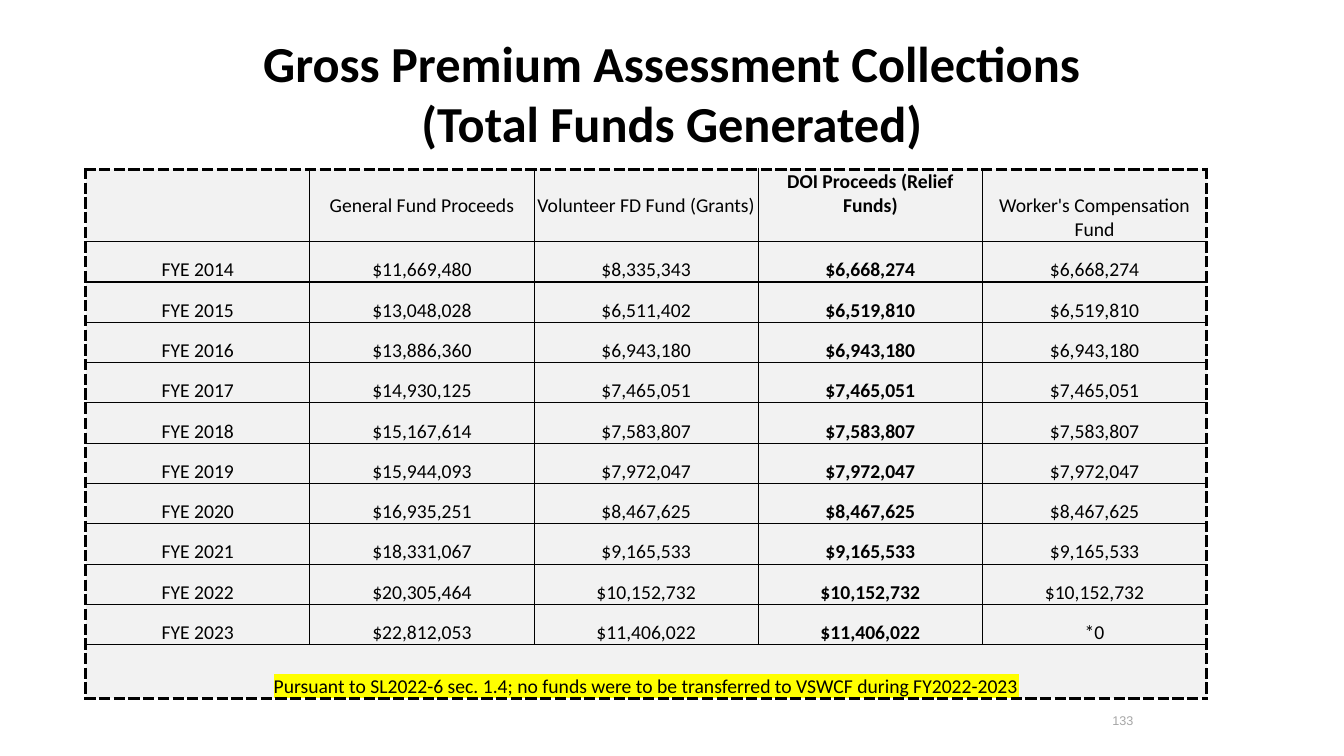
import pptx
import pptx.dml.color
import pptx.enum.text
import pptx.oxml
import pptx.oxml.ns
import pptx.util

Inches, Pt = pptx.util.Inches, pptx.util.Pt
RGBColor = pptx.dml.color.RGBColor
ALIGN, ANCHOR = pptx.enum.text.PP_ALIGN, pptx.enum.text.MSO_ANCHOR

BLACK = RGBColor(0x00, 0x00, 0x00)
PALE = RGBColor(0xF2, 0xF2, 0xF2)
GREY = RGBColor(0xA6, 0xA6, 0xA6)
YELLOW = RGBColor(0xFF, 0xFF, 0x00)
SHADE = RGBColor(0xC0, 0xC0, 0xC0)

TITLE = "Gross Premium Assessment Collections\v(Total Funds Generated)"
HEADS = ["", "General Fund Proceeds", "Volunteer FD Fund (Grants)",
         "DOI Proceeds (Relief Funds)", "Worker's Compensation Fund"]
FUNDS = [
    ("$11,669,480", "$8,335,343", "$6,668,274", "$6,668,274"),
    ("$13,048,028", "$6,511,402", "$6,519,810", "$6,519,810"),
    ("$13,886,360", "$6,943,180", "$6,943,180", "$6,943,180"),
    ("$14,930,125", "$7,465,051", "$7,465,051", "$7,465,051"),
    ("$15,167,614", "$7,583,807", "$7,583,807", "$7,583,807"),
    ("$15,944,093", "$7,972,047", "$7,972,047", "$7,972,047"),
    ("$16,935,251", "$8,467,625", "$8,467,625", "$8,467,625"),
    ("$18,331,067", "$9,165,533", "$9,165,533", "$9,165,533"),
    ("$20,305,464", "$10,152,732", "$10,152,732", "$10,152,732"),
    ("$22,812,053", "$11,406,022", "$11,406,022", "*0"),
]
NOTE = ("Pursuant to SL2022-6 sec. 1.4; no funds were to be transferred "
        "to VSWCF during FY2022-2023")
BOLD = 3  # column of relief funds
NS = 'xmlns:a="http://schemas.openxmlformats.org/drawingml/2006/main"'


class Deck:
    def __init__(self):
        self.file = pptx.Presentation()
        self.file.slide_width = Inches(13.33)
        self.file.slide_height = Inches(7.5)
        self.slide = self.file.slides.add_slide(self.file.slide_layouts[6])
        self.base = {"name": "Calibri", "size": Pt(14), "bold": False}

    def fill(self, frame, text, align=ALIGN.CENTER, color=BLACK, **style):
        """Set the words of a text frame and their style."""
        para = frame.paragraphs[0]
        para.text = text
        para.alignment = align
        for run in para.runs:
            for key, value in {**self.base, **style}.items():
                setattr(run.font, key, value)
            run.font.color.rgb = color

    def effect(self, frame, xml):
        """Put a text effect on every run, ahead of its typeface."""
        for run in frame.paragraphs[0].runs:
            latin = run.font._element.find(pptx.oxml.ns.qn("a:latin"))
            latin.addprevious(pptx.oxml.parse_xml(xml))

    def text(self, text, box, **style):
        frame = self.slide.shapes.add_textbox(*map(Inches, box)).text_frame
        frame.word_wrap = True
        frame.vertical_anchor = ANCHOR.MIDDLE
        self.fill(frame, text, **style)
        return frame

    def edge(self, cell, side, outer):
        width, dash = (Pt(2.25), "lgDash") if outer else (Pt(1), "solid")
        cell._tc.get_or_add_tcPr().append(pptx.oxml.parse_xml(
            f'<a:ln{side} {NS} w="{width}"><a:solidFill><a:srgbClr '
            f'val="{BLACK}"/></a:solidFill><a:prstDash val="{dash}"/>'
            f'</a:ln{side}>'))

    def table(self, rows, box, highs):
        count, wide = len(rows), len(rows[0])
        grid = self.slide.shapes.add_table(
            count, wide, *map(Inches, box)).table
        grid.first_row = grid.horz_banding = False
        for row, high in zip(grid.rows, highs):
            row.height = Inches(high)
        for col in grid.columns:
            col.width = Inches(box[2] / wide)
        last = count - 1
        grid.cell(last, 0).merge(grid.cell(last, wide - 1))
        for r, row in enumerate(rows):
            for c, text in enumerate(row):
                cell = grid.cell(r, c)
                right = c == wide - 1 or cell.is_merge_origin
                outer = {"L": c == 0, "R": right,
                         "T": r == 0, "B": r == last}
                for side, flag in outer.items():
                    self.edge(cell, side, flag)
                cell.fill.solid()
                cell.fill.fore_color.rgb = PALE
                cell.vertical_anchor = ANCHOR.BOTTOM
                for side in ("left", "right", "top"):
                    setattr(cell, f"margin_{side}", Inches(0.01))
                # Heads stand one line up, except the last one
                raised = r == 0 and c < wide - 1
                cell.margin_bottom = Inches(0.24 if raised else 0)
                if text:
                    self.fill(cell.text_frame, text, bold=c == BOLD)
        return grid


def main():
    deck = Deck()
    title = deck.text(TITLE, (0, 0.26, 13.33, 1.31), size=Pt(36), bold=True)
    deck.effect(title, f'<a:effectLst {NS}><a:outerShdw dist="38100" '
                f'dir="2700000"><a:srgbClr val="{SHADE}"/></a:outerShdw>'
                '</a:effectLst>')

    years = [(f"FYE {2014 + i}", *row) for i, row in enumerate(FUNDS)]
    rows = [HEADS, *years, [NOTE, "", "", "", ""]]
    highs = [0.71, *[0.4] * len(years), 0.53]
    grid = deck.table(rows, (0.85, 1.68, 11.12, 5.26), highs)
    deck.effect(grid.cell(len(rows) - 1, 0).text_frame,
                f'<a:highlight {NS}><a:srgbClr val="{YELLOW}"/></a:highlight>')

    deck.text("133", (9.56, 6.95, 1.78, 0.4), align=ALIGN.RIGHT,
              color=GREY, name="Arial", size=Pt(9))
    deck.file.save("out.pptx")


if __name__ == "__main__":
    main()
